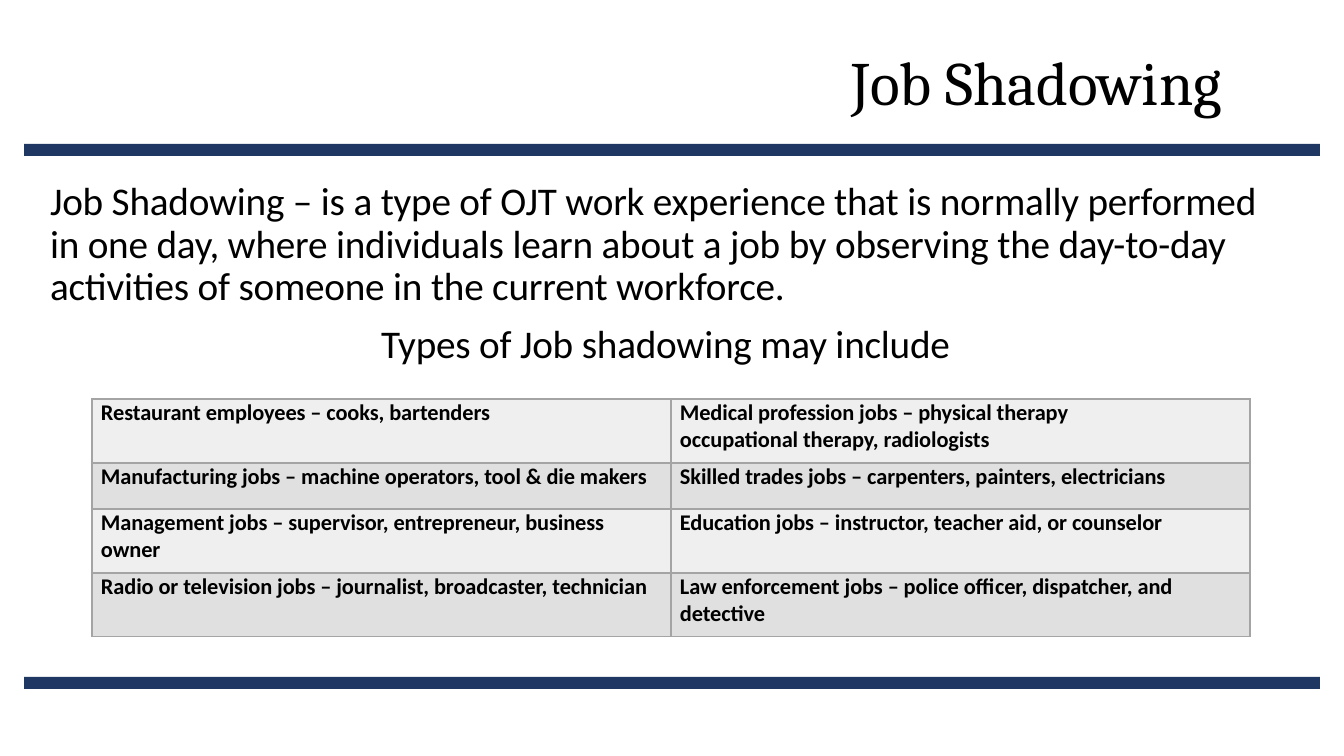
from lxml.etree import SubElement
from pptx import Presentation
from pptx.dml.color import RGBColor
from pptx.enum.shapes import MSO_SHAPE
from pptx.enum.text import PP_ALIGN
from pptx.oxml.ns import qn
from pptx.util import Emu, Pt

SCALE = 914400 / 100.8
NAVY, BLACK, GREY = "1F3863", "000000", "A4A4A4"
BANDS = ("EFEFEF", "E0E0E0")
ROWS = [
    (64, "Restaurant employees – cooks, bartenders",
     "Medical profession jobs – physical therapy occupational therapy, radiologists"),
    (46, "Manufacturing jobs – machine operators, tool & die makers",
     "Skilled trades jobs – carpenters, painters, electricians"),
    (64, "Management jobs – supervisor, entrepreneur, business\nowner",
     "Education jobs – instructor, teacher aid, or counselor"),
    (64, "Radio or television jobs – journalist, broadcaster, technician",
     "Law enforcement jobs – police officer, dispatcher, and detective"),
]


def px(num):
    return Emu(round(num * SCALE))


def paint(fill, tone):
    fill.solid()
    fill.fore_color.rgb = RGBColor.from_string(tone)


def add_run(para, text, size, face="Calibri", bold=False, track=0):
    run = para.add_run()
    run.text = text
    font = run.font
    font.name, font.size, font.bold = face, Pt(size), bold
    font.color.rgb = RGBColor.from_string(BLACK)
    # Letter spacing, in hundredths of a point
    run._r.get_or_add_rPr().set("spc", str(track))


def add_bar(slide, top):
    bar = slide.shapes.add_shape(MSO_SHAPE.RECTANGLE, px(24), px(top), px(1296), px(12))
    bar.shadow.inherit = False
    paint(bar.fill, NAVY)
    bar.line.fill.background()


def add_box(slide, left, top, wide, high, right=0):
    frame = slide.shapes.add_textbox(px(left), px(top), px(wide), px(high)).text_frame
    frame.word_wrap = True
    frame.margin_left = frame.margin_top = frame.margin_bottom = 0
    frame.margin_right = px(right)
    return frame


def add_edges(cell):
    props = cell._tc.get_or_add_tcPr()
    for side in ("a:lnL", "a:lnR", "a:lnT", "a:lnB"):
        line = SubElement(props, qn(side), w=str(Pt(1)))
        fill = SubElement(line, qn("a:solidFill"))
        SubElement(fill, qn("a:srgbClr"), val=GREY)


def fill_cell(cell, text, tone, right):
    add_edges(cell)
    paint(cell.fill, tone)
    cell.margin_left, cell.margin_right = px(9), px(right)
    cell.margin_top = cell.margin_bottom = 0
    frame = cell.text_frame
    for num, line in enumerate(text.split("\n")):
        para = frame.add_paragraph() if num else frame.paragraphs[0]
        add_run(para, line, 16, bold=True, track=-5)


def add_jobs(slide):
    high = sum(row[0] for row in ROWS)
    table = slide.shapes.add_table(len(ROWS), 2, px(92), px(399), px(1159), px(high)).table
    table.first_row = table.horz_banding = False
    for col in table.columns:
        col.width = px(579)
    for num, (tall, *texts) in enumerate(ROWS):
        table.rows[num].height = px(tall)
        for col, (text, right) in enumerate(zip(texts, (0, 70))):
            fill_cell(table.cell(num, col), text, BANDS[num % 2], right)


def main():
    deck = Presentation()
    deck.slide_width, deck.slide_height = px(1344), px(756)
    slide = deck.slides.add_slide(deck.slide_layouts[6])

    # Title between the page top and the first bar
    title = add_box(slide, 101, 44, 1142, 75, right=21).paragraphs[0]
    title.alignment = PP_ALIGN.RIGHT
    add_run(title, "Job Shadowing", 44, face="Cambria")
    for top in (144, 677):
        add_bar(slide, top)

    # Definition and table heading
    body = add_box(slide, 50, 182, 1231, 186)
    intro = body.paragraphs[0]
    intro.line_spacing = 0.9
    add_run(intro, "Job Shadowing – is a type of OJT work experience that is normally "
            "performed in one day, where individuals learn about a job by observing "
            "the day-to-day activities of someone in the current workforce.", 28, track=-15)
    head = body.add_paragraph()
    head.alignment = PP_ALIGN.CENTER
    head.space_before = Pt(7)
    add_run(head, "Types of Job shadowing may include", 28, track=-15)

    # Job examples
    add_jobs(slide)
    deck.save("out.pptx")


if __name__ == "__main__":
    main()
